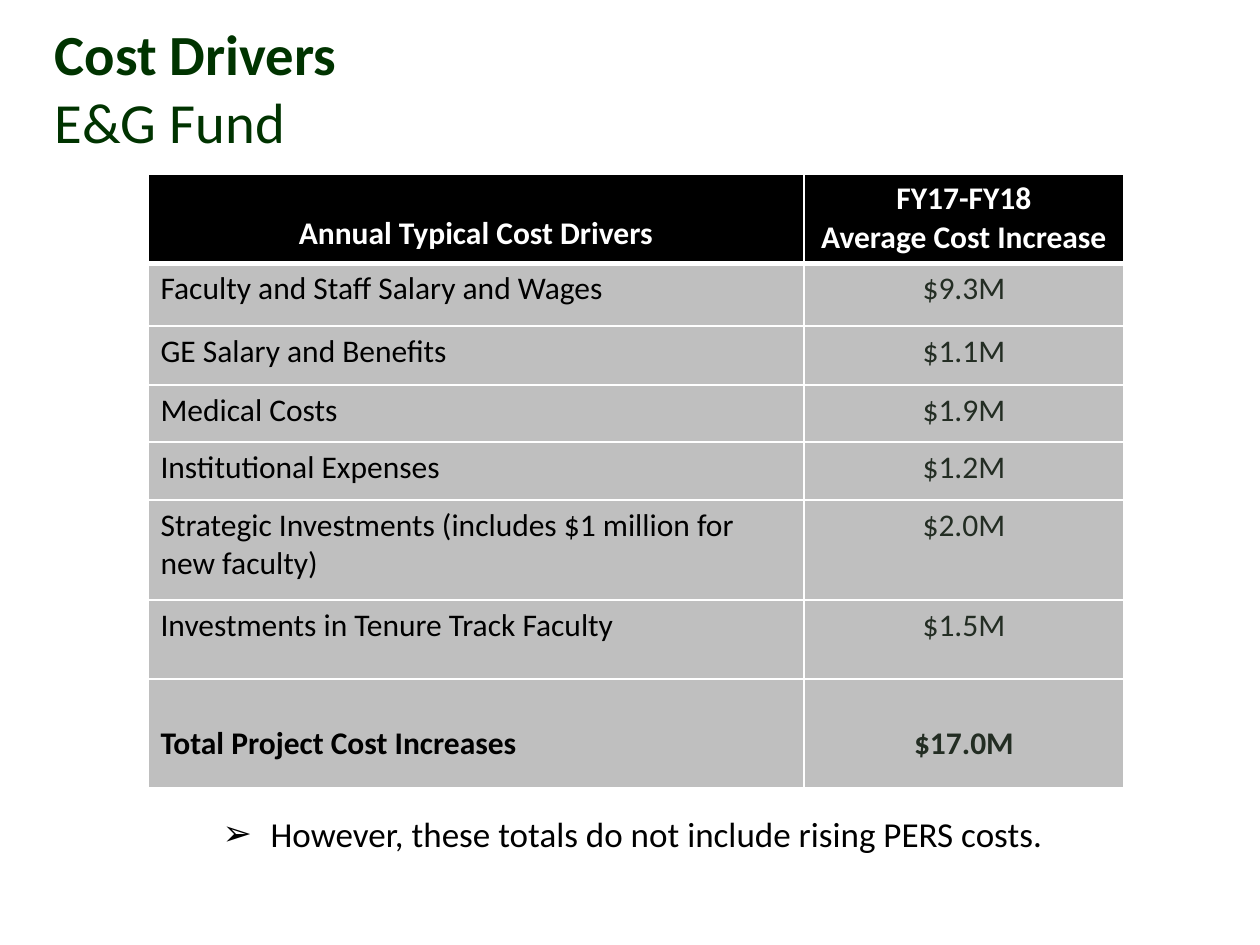
from lxml import etree
from pptx import Presentation
from pptx.dml.color import RGBColor
from pptx.enum.text import MSO_ANCHOR, MSO_AUTO_SIZE, PP_ALIGN
from pptx.oxml.ns import qn
from pptx.util import Emu, Pt

LEFT, CENTER = PP_ALIGN.LEFT, PP_ALIGN.CENTER
TOP, MIDDLE = MSO_ANCHOR.TOP, MSO_ANCHOR.MIDDLE
NO_FIT = MSO_AUTO_SIZE.NONE

GREEN, INK, BLACK, WHITE, GRAY = "003300", "232D23", "000000", "FFFFFF", "BFBFBF"


def px(n):
    return Emu(round(n * 914400 / 126))


def color(code):
    return RGBColor.from_string(code)


class Deck:
    font = "Calibri"

    def __init__(self, wide, high):
        self.prs = Presentation()
        self.prs.slide_width, self.prs.slide_height = px(wide), px(high)
        self.slide = self.prs.slides.add_slide(self.prs.slide_layouts[1])

    def place(self, shape, box):
        shape.left, shape.top, shape.width, shape.height = map(px, box)
        frame = shape.text_frame
        frame.word_wrap, frame.auto_size = True, NO_FIT
        return frame

    def run(self, para, text, size, ink, bold=False):
        run = para.add_run()
        run.text = text
        font = run.font
        font.name, font.size, font.bold = self.font, Pt(size), bold
        font.color.rgb = color(ink)

    def title(self, box, head, sub, size):
        frame = self.place(self.slide.shapes.title, box)
        frame.vertical_anchor = MIDDLE
        para = frame.paragraphs[0]
        para.alignment = LEFT
        self.run(para, head, size, GREEN, True)
        para.add_line_break()
        # The break takes the text size, so both lines are equally tall
        etree.SubElement(para._p[-1], qn("a:rPr"), sz=str(round(size * 100)))
        self.run(para, sub, size, GREEN)

    def note(self, box, text, size, mark, indent):
        frame = self.place(self.slide.placeholders[1], box)
        frame.vertical_anchor = TOP
        para = frame.paragraphs[0]
        props = para._p.get_or_add_pPr()
        props.set("marL", str(px(indent)))
        props.set("indent", str(-px(indent)))
        etree.SubElement(props, qn("a:buChar"), char=mark)
        para.alignment, para.space_before = LEFT, Pt(0)
        self.run(para, text, size, BLACK)

    def border(self, cell, bottom):
        props = cell._tc.get_or_add_tcPr()
        for spot, side in enumerate(("lnL", "lnR", "lnT", "lnB")):
            wide = bottom if side == "lnB" else 1
            line = etree.Element(qn(f"a:{side}"), w=str(Pt(wide)))
            fill = etree.SubElement(line, qn("a:solidFill"))
            etree.SubElement(fill, qn("a:srgbClr"), val=WHITE)
            props.insert(spot, line)

    def cell(self, cell, lines, fill, ink, bold, align, inset, bottom):
        cell.fill.solid()
        cell.fill.fore_color.rgb = color(fill)
        cell.margin_top = px(inset)
        cell.vertical_anchor = TOP
        frame = cell.text_frame
        for i, text in enumerate(lines):
            para = frame.add_paragraph() if i else frame.paragraphs[0]
            para.alignment = align
            self.run(para, text, 18, ink, bold)
        self.border(cell, bottom)

    def table(self, left, top, cols, highs, rows):
        frame = self.slide.shapes.add_table(
            len(rows), len(cols), px(left), px(top), px(sum(cols)), px(sum(highs)))
        grid = frame.table
        for col, wide in zip(grid.columns, cols):
            col.width = px(wide)
        last = len(rows) - 1
        for r, (high, row) in enumerate(zip(highs, rows)):
            grid.rows[r].height = px(high)
            for c, text in enumerate(row):
                head, lines = r == 0, text.split("\n")
                # The header label and the total sit one line lower
                inset = 45 if r == last else 40 if head and len(lines) == 1 else 6
                self.cell(
                    grid.cell(r, c), lines, BLACK if head else GRAY,
                    WHITE if head else (BLACK, INK)[c], r in (0, last),
                    CENTER if head or c else LEFT, inset, 3 if head else 1)


def main():
    deck = Deck(1260, 945)

    # Title
    deck.title((42, 10, 1187, 154), "Cost Drivers", "E&G Fund", 32.4)

    # Cost table
    rows = [
        ("Annual Typical Cost Drivers", "FY17-FY18\nAverage Cost Increase"),
        ("Faculty and Staff Salary and Wages", "$9.3M"),
        ("GE Salary and Benefits", "$1.1M"),
        ("Medical Costs", "$1.9M"),
        ("Institutional Expenses", "$1.2M"),
        ("Strategic Investments (includes $1 million for new faculty)", "$2.0M"),
        ("Investments in Tenure Track Faculty", "$1.5M"),
        ("Total Project Cost Increases", "$17.0M"),
    ]
    highs = (89, 63, 59, 57, 58, 100, 79, 109)
    deck.table(148, 174, (656, 320), highs, rows)

    # Closing note
    deck.note((210, 806, 1166, 55),
              "However, these totals do not include rising PERS costs.", 20, "➢", 48)

    deck.prs.save("out.pptx")


if __name__ == "__main__":
    main()
